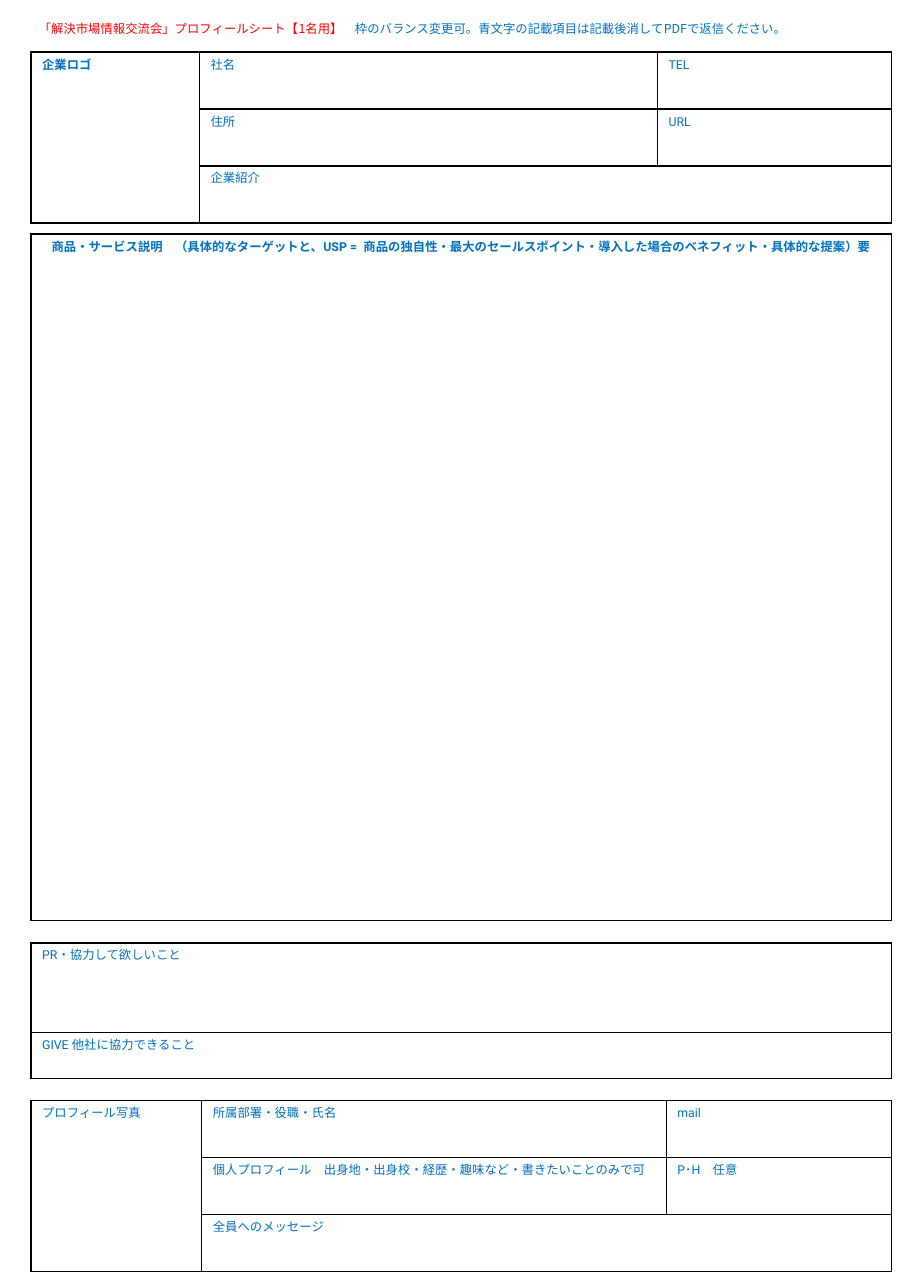
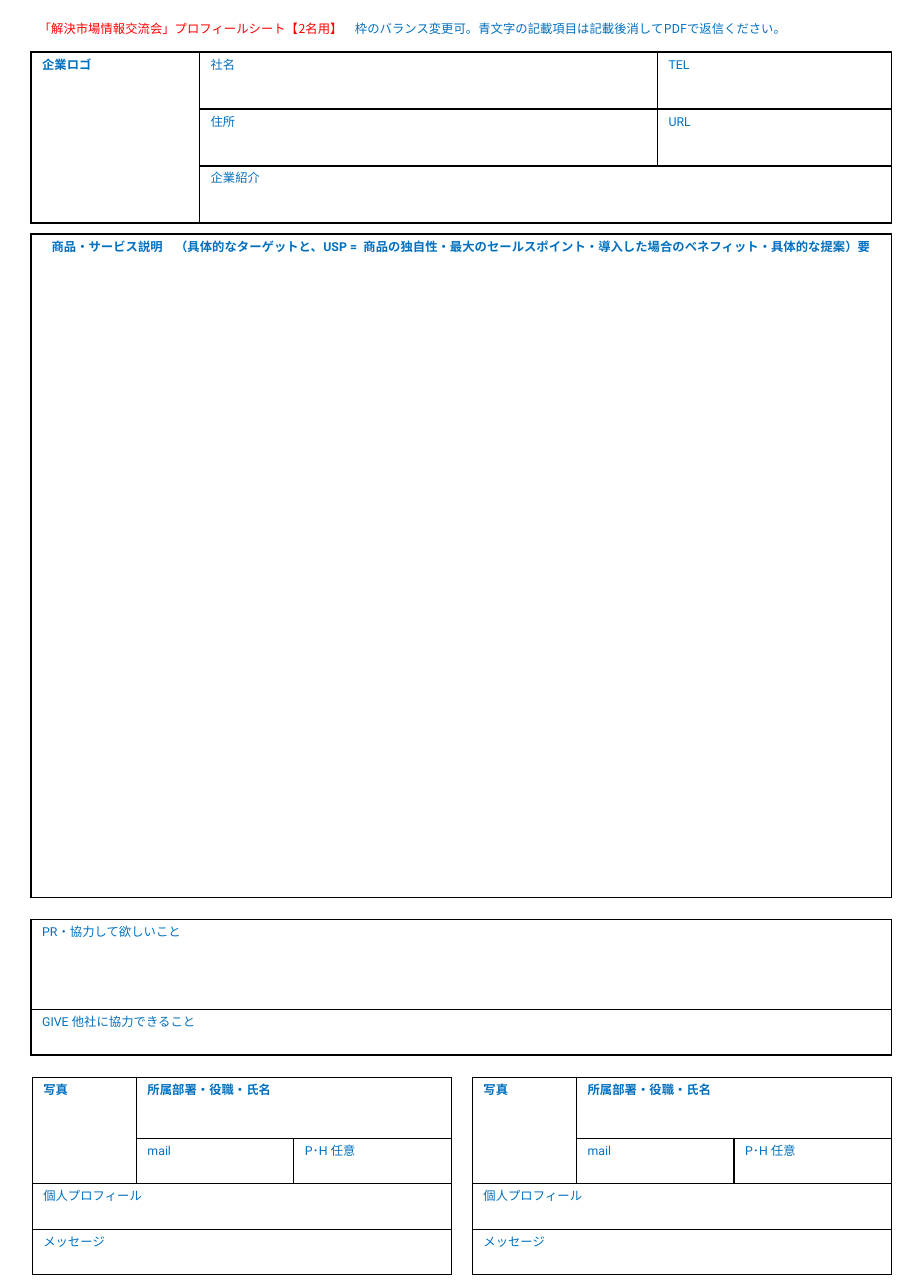
import dataclasses

import lxml.etree
import pptx
import pptx.dml.color
import pptx.enum.text
import pptx.oxml.ns
import pptx.util

qn = pptx.oxml.ns.qn
ALIGN = pptx.enum.text.PP_ALIGN


@dataclasses.dataclass(frozen=True)
class Theme:
    notice: str = "FF0000"
    hint: str = "0070C0"
    rule: str = "000000"
    rule_width: float = 1
    text_size: float = 8
    title_font: str = "Noto Sans CJK JP"
    table_font: str = "Roboto"
    module: float = 0.1
    page_columns: float = 82.7
    page_rows: float = 116.1
    margin: float = 2.8
    table_columns: float = 77.6


def rgb(code):
    return pptx.dml.color.RGBColor.from_string(code)


class Sheet:
    def __init__(self, theme):
        self.theme = theme
        self.deck = pptx.Presentation()
        self.deck.slide_width = self.units(theme.page_columns)
        self.deck.slide_height = self.units(theme.page_rows)
        self.page = None

    def units(self, count):
        return pptx.util.Inches(count * self.theme.module)

    def new_page(self):
        self.page = self.deck.slides.add_slide(self.deck.slide_layouts[5])

    def style(self, para, typeface, color=None, bold=False):
        font = para.font
        font.size = pptx.util.Pt(self.theme.text_size)
        font.bold = bold
        if color:
            font.color.rgb = rgb(color)
        font.name = typeface
        latin = para._p.pPr.find(qn("a:defRPr")).find(qn("a:latin"))
        east_asian = lxml.etree.Element(qn("a:ea"), typeface=typeface)
        latin.addnext(east_asian)

    def title(self, notice, hint):
        box = self.page.shapes.title
        box.left, box.top = self.units(2.5), self.units(1.4)
        box.width, box.height = self.units(80.2), self.units(2.4)
        frame = box.text_frame
        frame.word_wrap = True
        frame.auto_size = pptx.enum.text.MSO_AUTO_SIZE.SHAPE_TO_FIT_TEXT
        frame.vertical_anchor = pptx.enum.text.MSO_ANCHOR.TOP
        para = frame.paragraphs[0]
        para.alignment = ALIGN.LEFT
        for text, color in ((notice, self.theme.notice), (hint, self.theme.hint)):
            span = para.add_run()
            span.text = text
            span.font.color.rgb = rgb(color)
        self.style(para, self.theme.title_font)

    def outline(self, cell):
        cell.fill.background()
        properties = cell._tc.get_or_add_tcPr()
        width = str(pptx.util.Pt(self.theme.rule_width))
        for index, side in enumerate(("lnL", "lnR", "lnT", "lnB")):
            line = lxml.etree.Element(qn("a:" + side), w=width)
            fill = lxml.etree.SubElement(line, qn("a:solidFill"))
            lxml.etree.SubElement(fill, qn("a:srgbClr"), val=self.theme.rule)
            properties.insert(index, line)

    def table(self, top, columns, rows, labels, merges=(), bold=(),
              left=None, align=ALIGN.LEFT):
        left = self.theme.margin if left is None else left
        holder = self.page.shapes.add_table(
            len(rows), len(columns), self.units(left), self.units(top),
            self.units(sum(columns)), self.units(sum(rows)))
        table = holder.table
        table.first_row = table.horz_banding = False
        for column, width in zip(table.columns, columns):
            column.width = self.units(width)
        for row, height in zip(table.rows, rows):
            row.height = self.units(height)
        for cell in table.iter_cells():
            self.outline(cell)
        for (first_row, first_column), (last_row, last_column) in merges:
            table.cell(first_row, first_column).merge(
                table.cell(last_row, last_column))
        for (row, column), text in labels.items():
            para = table.cell(row, column).text_frame.paragraphs[0]
            para.text = text
            para.alignment = align
            self.style(para, self.theme.table_font, self.theme.hint, text in bold)

    def card(self, top, columns, texts, bold=()):
        places = ((0, 0), (0, 1), (0, 2), (1, 1), (1, 2), (2, 1))
        self.table(top, columns, [5.13] * 3, dict(zip(places, texts)),
                   [((0, 0), (2, 0)), ((2, 1), (2, 2))], bold)

    def company(self):
        self.card(4.7, [15.2, 41.3, 21.1],
                  ["企業ロゴ", "社名", "TEL", "住所", "URL", "企業紹介"], {"企業ロゴ"})

    def offer(self, height):
        text = ("商品・サービス説明　（具体的なターゲットと、USP =  商品の独自性・"
                "最大のセールスポイント・導入した場合のベネフィット・具体的な提案）要")
        self.table(21.1, [self.theme.table_columns], [height], {(0, 0): text},
                   bold={text}, align=ALIGN.CENTER)

    def cooperation(self, top):
        self.table(top, [self.theme.table_columns], [8.1, 4.1],
                   {(0, 0): "PR・協力して欲しいこと",
                    (1, 0): "GIVE 他社に協力できること"})

    def member(self, left):
        labels = {(0, 0): "写真", (0, 1): "所属部署・役職・氏名", (1, 1): "mail",
                  (1, 2): "P･H 任意", (2, 0): "個人プロフィール", (3, 0): "メッセージ"}
        merges = [((0, 0), (1, 0)), ((0, 1), (0, 2)),
                  ((2, 0), (2, 2)), ((3, 0), (3, 2))]
        self.table(97.1, [9.4, 14.2, 14.2], [5.5, 4.1, 4.1, 4.1], labels, merges,
                   {"写真", "所属部署・役職・氏名"}, left)

    def profile_page(self, people, offer_height):
        self.new_page()
        self.title(f"「解決市場情報交流会」プロフィールシート【{people}名用】　",
                   "枠のバランス変更可。青文字の記載項目は記載後消してPDFで返信ください。")
        self.company()
        self.offer(offer_height)
        self.cooperation(21.1 + offer_height + 2)


def main():
    sheet = Sheet(Theme())
    sheet.profile_page(1, 61.9)
    sheet.card(99.2, [15.4, 41.9, 20.3],
               ["プロフィール写真", "所属部署・役職・氏名", "mail",
                "個人プロフィール　出身地・出身校・経歴・趣味など・書きたいことのみで可",
                "P･H　任意", "全員へのメッセージ"])
    sheet.profile_page(2, 59.8)
    for left in (2.9, 42.6):
        sheet.member(left)
    sheet.deck.save("out.pptx")


if __name__ == "__main__":
    main()
